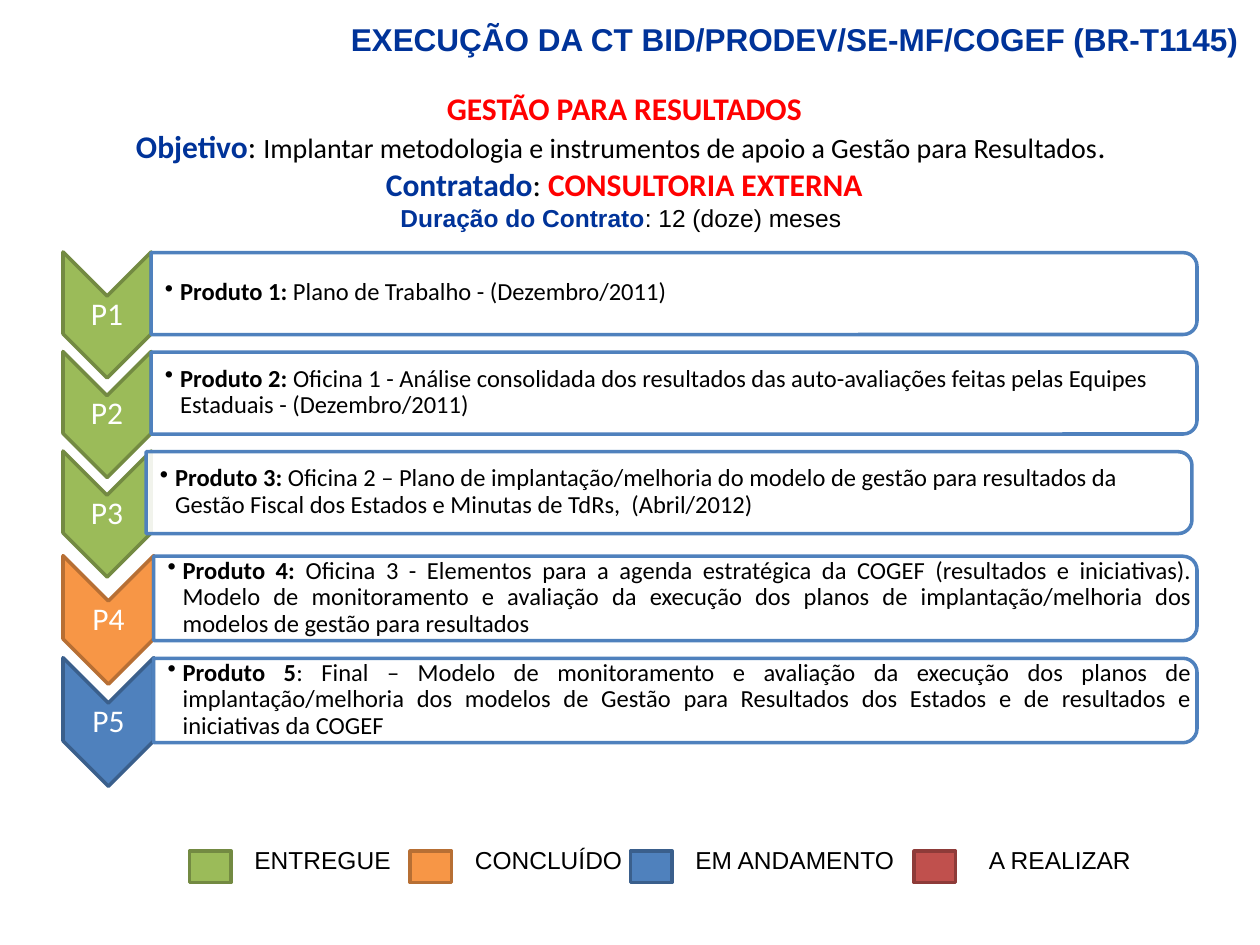
from lxml import etree
from pptx import Presentation
from pptx.dml.color import RGBColor
from pptx.enum.shapes import MSO_SHAPE
from pptx.enum.text import MSO_ANCHOR, PP_ALIGN
from pptx.oxml.ns import qn
from pptx.util import Inches, Pt

CHEVRON = MSO_SHAPE.CHEVRON
RECT = MSO_SHAPE.RECTANGLE
ROUND = MSO_SHAPE.ROUND_2_SAME_RECTANGLE
TOP, MIDDLE = MSO_ANCHOR.TOP, MSO_ANCHOR.MIDDLE
LEFT, CENTER = PP_ALIGN.LEFT, PP_ALIGN.CENTER
RIGHT, JUSTIFY = PP_ALIGN.RIGHT, PP_ALIGN.JUSTIFY

COLORS = {
    "green": "9BBB59", "green edge": "738A42",
    "orange": "F79646", "orange edge": "B76F34",
    "blue": "4F81BD", "blue edge": "3A5F8C",
    "red": "C0504D", "red edge": "8E3B39",
    "navy": "003399", "alert": "FF0000",
    "black": "000000", "white": "FFFFFF",
}
THIN = (0.01,) * 4
BODY = (0.11, 0.01, 0.01, 0.01)


class Board:
    """Holds the slide and its style."""

    def __init__(self, slide):
        self.slide = slide
        self.sans = "Arial"
        self.body = "Calibri"

    def color(self, name):
        return RGBColor.from_string(COLORS[name])

    def shape(self, kind, mid_x, mid_y, width, height, fill, line, turn=0):
        """Place a preset by its centre, so that turned shapes stay aligned."""
        item = self.slide.shapes.add_shape(
            kind, Inches(mid_x - width / 2), Inches(mid_y - height / 2),
            Inches(width), Inches(height))
        item.rotation = turn
        item.shadow.inherit = False
        item.fill.solid()
        item.fill.fore_color.rgb = self.color(fill)
        item.line.color.rgb = self.color(line)
        item.line.width = Pt(2)
        return item

    def box(self, left, top, width, height, pad=(0.1, 0.05, 0.1, 0.05),
            anchor=TOP):
        item = self.slide.shapes.add_textbox(
            Inches(left), Inches(top), Inches(width), Inches(height))
        frame = item.text_frame
        frame.word_wrap = True
        frame.vertical_anchor = anchor
        (frame.margin_left, frame.margin_top,
         frame.margin_right, frame.margin_bottom) = map(Inches, pad)
        return frame

    def run(self, para, text, size, color="black", bold=False, font=None):
        run = para.add_run()
        run.text = text
        run.font.size = Pt(size)
        run.font.bold = bold
        run.font.name = font or self.body
        run.font.color.rgb = self.color(color)

    def bullet(self, para):
        props = para._p.get_or_add_pPr()
        props.set("marL", str(Inches(0.12)))
        props.set("indent", str(-Inches(0.12)))
        etree.SubElement(props, qn("a:buChar")).set("char", "•")

    def bar(self, mid_x, mid_y, thick, length):
        item = self.shape(ROUND, mid_x, mid_y, thick, length,
                          "white", "blue", 90)
        tint = item.fill._xPr.find(qn("a:solidFill"))[0]
        etree.SubElement(tint, qn("a:alpha")).set("val", "90000")

    def step(self, label, color, mid, parts, wide=False, shift=0):
        """Draw one product: chevron, label, bar and bulleted text."""
        extra = 0.02 if wide else 0
        mid_x, low = 0.85 + extra / 2, mid + 0.17
        self.shape(CHEVRON, mid_x, low, 1 + extra, 0.7 + extra,
                   color, color + " edge", 90)
        frame = self.box(0.5, low - 0.15, 0.7 + extra, 0.3, THIN, MIDDLE)
        para = frame.paragraphs[0]
        para.alignment = CENTER
        para.line_spacing = 0.9
        self.run(para, label, 18, "white")

        self.bar(5.35 + extra / 2 + shift, mid, 0.65 + extra, 8.3 - extra)
        frame = self.box(1.2 + extra + shift, mid - 0.3, 8.27 - extra, 0.59,
                         BODY, MIDDLE)
        para = frame.paragraphs[0]
        para.alignment = JUSTIFY if wide else LEFT
        para.line_spacing = 0.9
        self.bullet(para)
        for text, bold in zip(parts, (True, False)):
            self.run(para, text, 14, bold=bold)

    def key(self, left, gap, color, text):
        self.shape(RECT, left + 0.17, 6.88, 0.33, 0.25, color, color + " edge")
        para = self.box(left + gap, 6.66, 1.92, 0.34).paragraphs[0]
        self.run(para, text, 14, font=self.sans)


STEPS = [
    ("P1", "green", 2.33, ("Produto 1:", " Plano de Trabalho - (Dezembro/2011)")),
    ("P2", "green", 3.12, (
        "Produto 2: ",
        "Oficina 1 - Análise consolidada dos resultados das auto-avaliações "
        "feitas pelas Equipes Estaduais - (Dezembro/2011)")),
    ("P3", "green", 3.91, (
        "Produto 3: ",
        "Oficina 2 – Plano de implantação/melhoria do modelo de gestão para "
        "resultados da Gestão Fiscal dos Estados e Minutas de TdRs,  "
        "(Abril/2012)"), False, -0.04),
    ("P4", "orange", 4.75, (
        "Produto 4: ",
        "Oficina 3 - Elementos para a agenda estratégica da COGEF (resultados "
        "e iniciativas). Modelo de monitoramento e avaliação da execução dos "
        "planos de implantação/melhoria dos modelos de gestão para "
        "resultados"), True),
    ("P5", "blue", 5.56, (
        "Produto 5",
        ": Final – Modelo de monitoramento e avaliação da execução dos planos "
        "de implantação/melhoria dos modelos de Gestão para Resultados dos "
        "Estados e de resultados e iniciativas da COGEF"), True),
]
KEYS = [
    (1.5, 0.42, "green", "ENTREGUE"),
    (3.25, 0.42, "orange", "CONCLUÍDO"),
    (5, 0.42, "blue", "EM ANDAMENTO"),
    (7.25, 0.5, "red", "A REALIZAR"),
]
INTRO = [
    [("GESTÃO PARA RESULTADOS", 18, "alert", True)],
    [("Objetivo", 18, "navy", True), (": ", 18),
     ("Implantar metodologia e instrumentos de apoio a Gestão para Resultados",
      16), (". ", 18)],
    [("Contratado", 18, "navy", True), (": ", 18),
     ("CONSULTORIA EXTERNA", 18, "alert", True)],
]


def main():
    deck = Presentation()
    deck.slide_width, deck.slide_height = Inches(10), Inches(7.5)
    board = Board(deck.slides.add_slide(deck.slide_layouts[6]))

    title = board.box(2.42, 0, 7.62, 0.5, (0.1, 0.16, 0.21, 0.05)).paragraphs[0]
    title.alignment = RIGHT
    board.run(title, "EXECUÇÃO DA CT BID/PRODEV/SE-MF/COGEF (BR-T1145)", 18,
              "navy", True, board.sans)

    for step in STEPS:
        board.step(*step)

    intro = board.box(0.33, 0.66, 9.25, 1.55)
    para = intro.paragraphs[0]
    para.alignment = CENTER
    for row, runs in enumerate(INTRO):
        if row:
            para.add_line_break()
        for run in runs:
            board.run(para, *run)
    para = intro.add_paragraph()
    para.alignment = CENTER
    board.run(para, "Duração do Contrato", 14, "navy", True, board.sans)
    board.run(para, ": 12 (doze) meses ", 14, font=board.sans)

    for key in KEYS:
        board.key(*key)
    deck.save("out.pptx")


if __name__ == "__main__":
    main()
